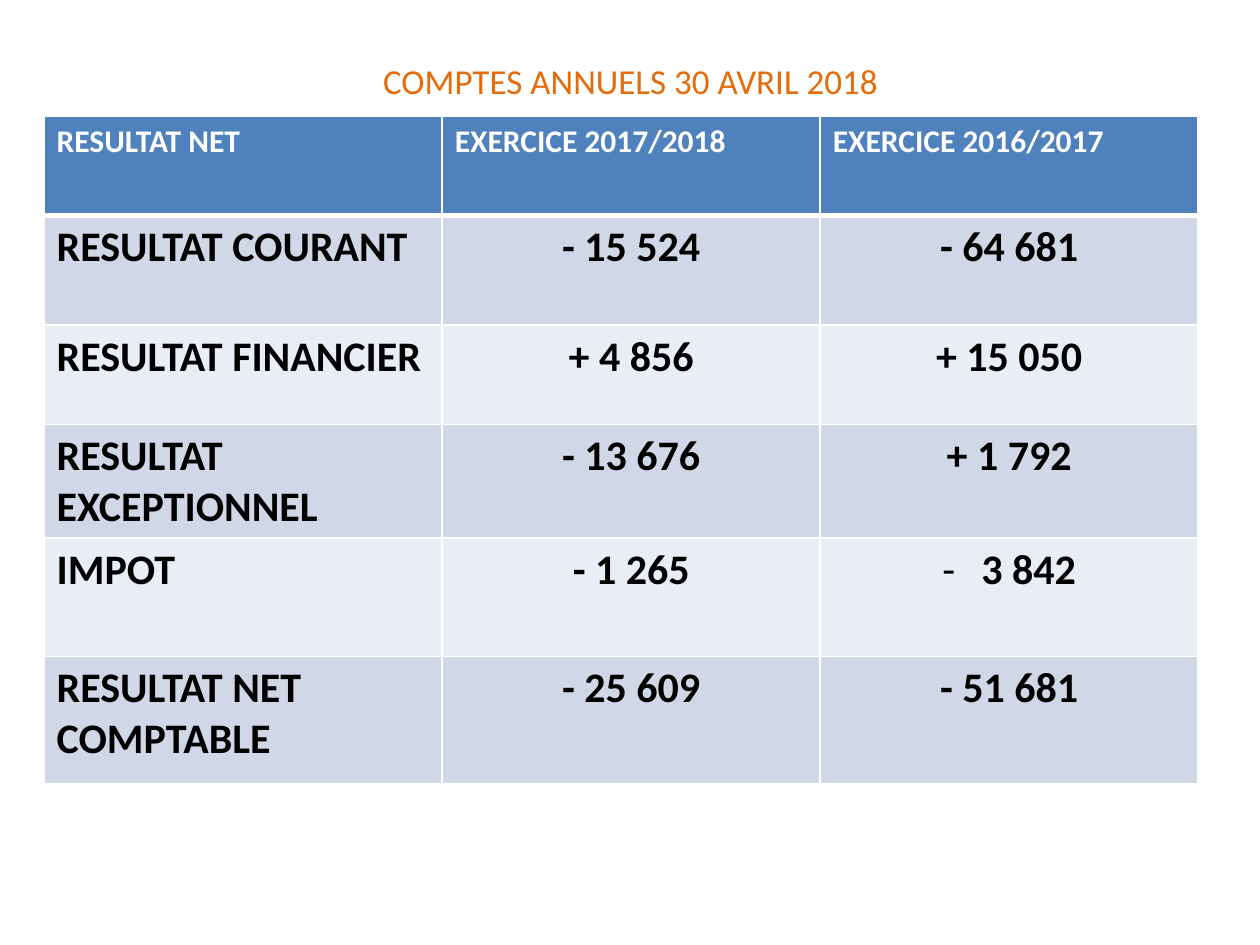
import pptx
import pptx.dml.color
import pptx.enum.text
import pptx.oxml.ns
import pptx.util
from lxml import etree
from pptx.util import Inches

COLORS = {
    "title": "E46C0A",
    "header": "4F81BD",
    "odd": "D0D8E8",
    "even": "E9EDF4",
    "white": "FFFFFF",
    "black": "000000",
}
ALIGN = pptx.enum.text.PP_ALIGN
qn = pptx.oxml.ns.qn


def add_text(para, text, size, color, bold=False):
    span = para.add_run()
    span.text = text
    span.font.name = "Calibri"
    span.font.size = pptx.util.Pt(size)
    span.font.bold = bold
    span.font.color.rgb = pptx.dml.color.RGBColor.from_string(COLORS[color])


def add_border(cell, side, points):
    """Draw a white line on one side (L, R, T or B); call before filling the cell."""
    line = etree.SubElement(cell._tc.get_or_add_tcPr(), qn(f"a:ln{side}"),
                            w=str(pptx.util.Pt(points)))
    fill = etree.SubElement(line, qn("a:solidFill"))
    etree.SubElement(fill, qn("a:srgbClr"), val=COLORS["white"])


deck = pptx.Presentation()
deck.slide_width, deck.slide_height = Inches(10), Inches(7.5)
page = deck.slides.add_slide(deck.slide_layouts[6])

# Title
box = page.shapes.add_textbox(Inches(0.51), Inches(0.29), Inches(8.99), Inches(0.69))
box.text_frame.word_wrap = True
box.text_frame.vertical_anchor = pptx.enum.text.MSO_ANCHOR.MIDDLE
para = box.text_frame.paragraphs[0]
para.alignment = ALIGN.CENTER
add_text(para, "COMPTES ANNUELS 30 AVRIL 2018", 20, "title")

# Results table
rows = [
    ("RESULTAT NET", "EXERCICE 2017/2018", "EXERCICE 2016/2017"),
    ("RESULTAT COURANT", "- 15 524", "- 64 681"),
    ("RESULTAT FINANCIER", "+ 4 856", "+ 15 050"),
    ("RESULTAT EXCEPTIONNEL", "- 13 676", "+ 1 792"),
    ("IMPOT", "- 1 265", "3 842"),
    ("RESULTAT NET COMPTABLE", "- 25 609", "- 51 681"),
]
widths = [3.16, 3, 3]
heights = [0.79, 0.87, 0.79, 0.87, 0.94, 1.01]
table = page.shapes.add_table(len(rows), len(widths), Inches(0.35), Inches(0.92),
                              Inches(sum(widths)), Inches(sum(heights))).table
for column, width in zip(table.columns, widths):
    column.width = Inches(width)
for row, height in zip(table.rows, heights):
    row.height = Inches(height)

for r, texts in enumerate(rows):
    is_header = r == 0
    fill_color = "header" if is_header else "odd" if r % 2 else "even"
    for c, text in enumerate(texts):
        cell = table.cell(r, c)
        for side in "LRTB":
            thick = (is_header and side == "B") or (r == 1 and side == "T")
            add_border(cell, side, 3 if thick else 1)
        cell.fill.solid()
        cell.fill.fore_color.rgb = pptx.dml.color.RGBColor.from_string(COLORS[fill_color])
        para = cell.text_frame.paragraphs[0]
        if c and not is_header:
            para.alignment = ALIGN.CENTER
        if is_header:
            add_text(para, text, 18, "white", bold=True)
        else:
            add_text(para, text, 24, "black", bold=True)

# The previous year's tax carries its minus sign as a bullet
tax_format = table.cell(4, 2).text_frame.paragraphs[0]._p.get_or_add_pPr()
tax_format.set("marL", str(Inches(0.31)))
tax_format.set("indent", str(Inches(-0.31)))
etree.SubElement(tax_format, qn("a:buFont"), typeface="Calibri")
etree.SubElement(tax_format, qn("a:buChar"), char="-")

deck.save("out.pptx")
